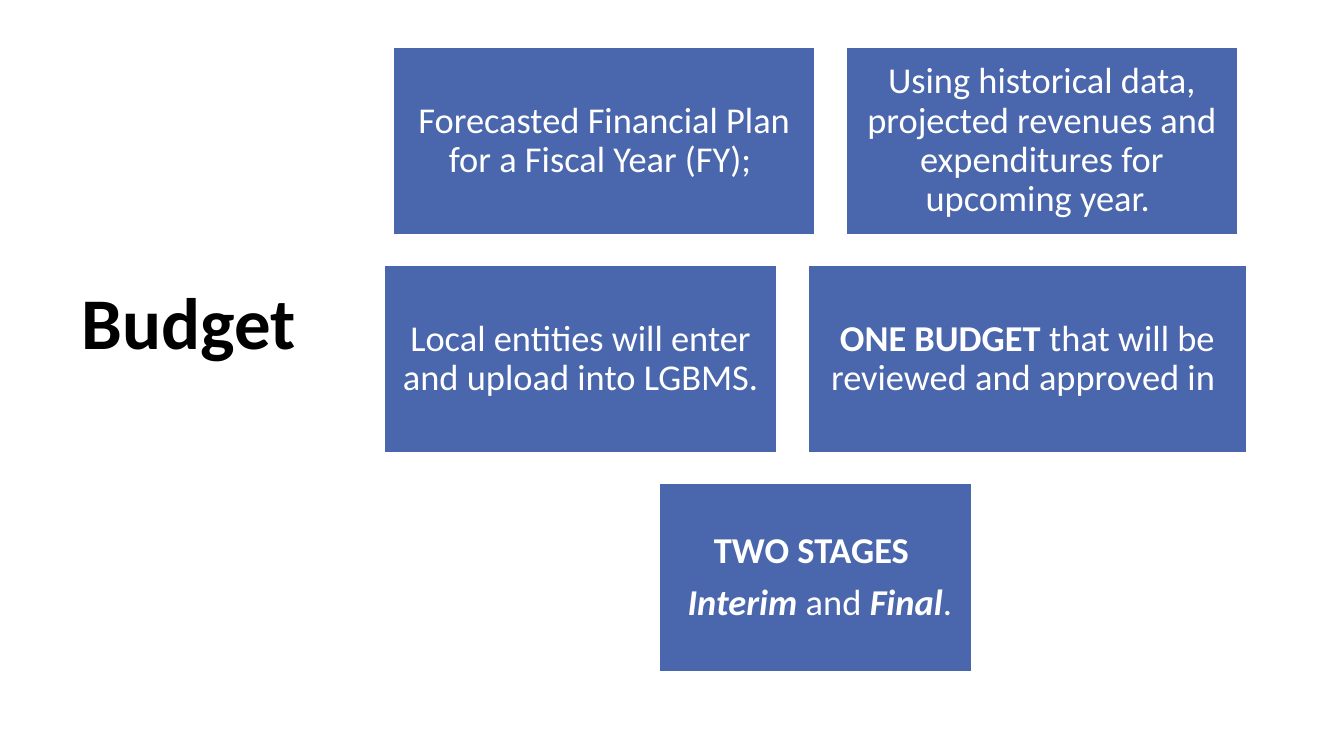
from pptx import Presentation
from pptx.dml.color import RGBColor
from pptx.enum.shapes import MSO_SHAPE as Shape
from pptx.enum.text import MSO_ANCHOR as Anchor, MSO_AUTO_SIZE as AutoSize, PP_ALIGN as Align
from pptx.util import Inches, Pt

TITLE = "Budget"
# Each row holds boxes (width, paragraphs); a paragraph is a list of (text, style) runs.
ROWS = [
    [(4.18, [[("Forecasted Financial Plan for a Fiscal Year (FY); ", "")]]),
     (3.88, [[("Using historical data, projected revenues and expenditures "
               "for upcoming year. ", "")]])],
    [(3.89, [[("Local entities will enter and upload into LGBMS.", "")]]),
     (4.35, [[("ONE BUDGET", "b"), (" that will be reviewed and approved in ", "")]])],
    [(3.1, [[("TWO STAGES ", "b")],
            [(" ", ""), ("Interim ", "bi"), ("and ", ""), ("Final", "bi"), (".", "")]])],
]
CENTER, TOP, BOX_HEIGHT, GAP = 8.09, 0.47, 1.86, 0.31
ROW_PITCH = 2.165
BLUE, WHITE, BLACK = "4A66AC", "FFFFFF", "000000"


def color(hex_value):
    return RGBColor.from_string(hex_value)


def set_values(target, values):
    for name, value in values.items():
        setattr(target, name, value)


def add_run(paragraph, text, size, hex_value, style):
    run = paragraph.add_run()
    run.text = text
    set_values(run.font, {"name": "Calibri", "size": Pt(size),
                          "bold": "b" in style, "italic": "i" in style})
    run.font.color.rgb = color(hex_value)


def add_box(slide, left, top, width, paragraphs):
    box = slide.shapes.add_shape(Shape.RECTANGLE, Inches(left), Inches(top),
                                 Inches(width), Inches(BOX_HEIGHT))
    box.shadow.inherit = False
    box.fill.solid()
    box.fill.fore_color.rgb = color(BLUE)
    box.line.color.rgb = color(WHITE)
    box.line.width = Pt(1)
    frame = box.text_frame
    inset = Inches(0.11)
    set_values(frame, {"word_wrap": True, "vertical_anchor": Anchor.MIDDLE,
                       "margin_left": inset, "margin_right": inset,
                       "margin_top": inset, "margin_bottom": inset})
    for index, runs in enumerate(paragraphs):
        paragraph = frame.add_paragraph() if index else frame.paragraphs[0]
        set_values(paragraph, {"alignment": Align.CENTER, "line_spacing": 0.9,
                               "space_before": Pt(9 if index else 0)})
        for text, style in runs:
            add_run(paragraph, text, 26, WHITE, style)


def main():
    deck = Presentation()
    deck.slide_width, deck.slide_height = Inches(13.33), Inches(7.5)
    slide = deck.slides.add_slide(deck.slide_layouts[5])

    title = slide.shapes.title
    set_values(title, {"left": Inches(0.71), "top": Inches(0.19),
                       "width": Inches(2.96), "height": Inches(6.09)})
    set_values(title.text_frame, {"word_wrap": True, "auto_size": AutoSize.NONE,
                                  "vertical_anchor": Anchor.MIDDLE})
    heading = title.text_frame.paragraphs[0]
    set_values(heading, {"alignment": Align.LEFT, "line_spacing": 0.9})
    add_run(heading, TITLE, 52, BLACK, "b")

    for row_index, row in enumerate(ROWS):
        row_width = sum(width for width, _ in row) + GAP * (len(row) - 1)
        left = CENTER - row_width / 2
        for width, paragraphs in row:
            add_box(slide, left, TOP + row_index * ROW_PITCH, width, paragraphs)
            left += width + GAP

    deck.save("out.pptx")


if __name__ == "__main__":
    main()
